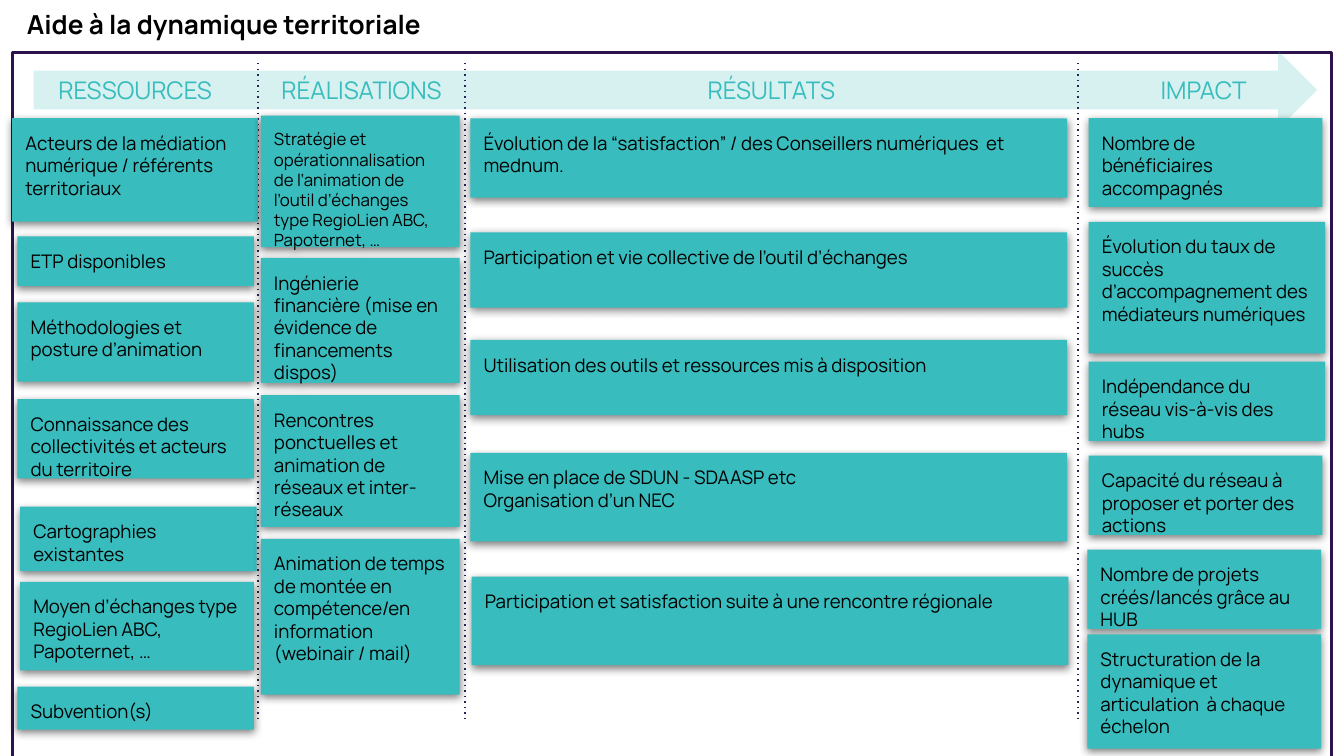
from dataclasses import dataclass

import lxml.etree
import pptx
import pptx.dml.color
import pptx.enum.shapes
import pptx.enum.text
import pptx.oxml.ns
import pptx.util

Inches = pptx.util.Inches
Pt = pptx.util.Pt
MSO_SHAPE = pptx.enum.shapes.MSO_SHAPE
PP_ALIGN = pptx.enum.text.PP_ALIGN
qn = pptx.oxml.ns.qn

TEAL, NAVY, DOTS, BLACK = "39BCBD", "2D134B", "29235C", "000000"
SEPARATORS = (1.92, 3.46, 8.02)


@dataclass
class Card:
    text: str
    left: float
    top: float
    width: float
    height: float
    size: int = 10


@dataclass
class Column:
    header: str
    left: float
    width: float
    cards: list[Card]


COLUMNS = [
    Column("RESSOURCES", 0.09, 1.83, [
        Card("Acteurs de la médiation numérique / référents territoriaux", 0.09, 0.88, 1.83, 0.77),
        Card("ETP disponibles", 0.13, 1.76, 1.76, 0.37),
        Card("Méthodologies et posture d’animation", 0.13, 2.25, 1.76, 0.59),
        Card("Connaissance des collectivités et acteurs du territoire", 0.13, 2.97, 1.76, 0.59),
        Card("Cartographies existantes", 0.15, 3.77, 1.76, 0.48),
        Card("Moyen d’échanges type RegioLien ABC, Papoternet, …", 0.15, 4.33, 1.74, 0.66),
        Card("Subvention(s)", 0.13, 5.11, 1.76, 0.32),
    ]),
    Column("RÉALISATIONS", 1.92, 1.54, [
        Card("Stratégie et opérationnalisation de l’animation de l’outil d’échanges "
             "type RegioLien ABC, Papoternet, …", 1.94, 0.86, 1.48, 0.98, 9),
        Card("Ingénierie financière (mise en évidence de financements dispos)",
             1.94, 1.92, 1.48, 0.93),
        Card("Rencontres ponctuelles et animation de réseaux et inter-réseaux",
             1.94, 2.94, 1.48, 0.98),
        Card("Animation de temps de montée en compétence/en information (webinair / mail)",
             1.94, 4.01, 1.48, 1.16),
    ]),
    Column("RÉSULTATS", 3.46, 4.56, [
        Card("Évolution de la “satisfaction” / des Conseillers numériques  et mednum.",
             3.5, 0.88, 4.44, 0.59),
        Card("Participation et vie collective de l’outil d’échanges", 3.5, 1.73, 4.44, 0.56),
        Card("Utilisation des outils et ressources mis à disposition", 3.5, 2.53, 4.44, 0.56),
        Card("Mise en place de SDUN - SDAASP etc \vOrganisation d’un NEC", 3.5, 3.37, 4.44, 0.66),
        Card("Participation et satisfaction suite à une rencontre régionale",
             3.51, 4.29, 4.44, 0.66),
    ]),
    Column("IMPACT", 8, 1.91, [
        Card("Nombre de bénéficiaires accompagnés", 8.1, 0.88, 1.74, 0.66),
        Card("Évolution du taux de succès d’accompagnement des médiateurs numériques",
             8.1, 1.65, 1.76, 0.98),
        Card("Indépendance du réseau vis-à-vis des hubs", 8.1, 2.69, 1.76, 0.59),
        Card("Capacité du réseau à proposer et porter des actions", 8.1, 3.39, 1.74, 0.59),
        Card("Nombre de projets créés/lancés grâce au HUB", 8.09, 4.09, 1.74, 0.59),
        Card("Structuration de la dynamique et articulation  à chaque échelon",
             8.09, 4.72, 1.74, 0.85),
    ]),
]


def rgb(color: str) -> pptx.dml.color.RGBColor:
    return pptx.dml.color.RGBColor.from_string(color)


def add_alpha(color_element, percent: int) -> None:
    lxml.etree.SubElement(color_element, qn("a:alpha"), val=str(percent * 1000))


def set_text(sp, text: str, size: int, color: str, align=PP_ALIGN.LEFT, bold=False) -> None:
    tf = sp.text_frame
    tf.text = text
    tf.word_wrap = True
    tf.auto_size = pptx.enum.text.MSO_AUTO_SIZE.NONE
    tf.vertical_anchor = pptx.enum.text.MSO_ANCHOR.TOP
    tf.margin_left = tf.margin_right = tf.margin_top = tf.margin_bottom = Inches(0.1)
    for p in tf.paragraphs:
        p.alignment = align
        for r in p.runs:
            r.font.name = "Manrope"
            r.font.size = Pt(size)
            r.font.bold = bold
            r.font.color.rgb = rgb(color)


def add_block(s, kind, left: float, top: float, width: float, height: float, fill=None):
    sp = s.shapes.add_shape(kind, Inches(left), Inches(top), Inches(width), Inches(height))
    sp.shadow.inherit = False
    sp.line.fill.background()
    if fill:
        sp.fill.solid()
        sp.fill.fore_color.rgb = rgb(fill)
    else:
        sp.fill.background()
    return sp


def add_card(s, card: Card) -> None:
    sp = add_block(s, MSO_SHAPE.RECTANGLE, card.left, card.top, card.width, card.height, TEAL)
    set_text(sp, card.text, card.size, BLACK)
    effects = sp._element.spPr.find(qn("a:effectLst"))
    shadow = lxml.etree.SubElement(
        effects, qn("a:outerShdw"), blurRad=str(Pt(4.5)), dist=str(Pt(1.5)),
        dir="5400000", algn="bl", rotWithShape="0")
    add_alpha(lxml.etree.SubElement(shadow, qn("a:srgbClr"), val=BLACK), 50)


def add_separator(s, x: float) -> None:
    line = s.shapes.add_connector(pptx.enum.shapes.MSO_CONNECTOR.STRAIGHT,
                                  Inches(x), Inches(0.47), Inches(x), Inches(5.36))
    line.line.color.rgb = rgb(DOTS)
    line.line.width = Pt(0.75)
    spPr = line._element.spPr
    lxml.etree.SubElement(spPr.find(qn("a:ln")), qn("a:prstDash"), val="dot")
    lxml.etree.SubElement(spPr, qn("a:effectLst"))


def add_header(s, column: Column) -> None:
    box = s.shapes.add_textbox(Inches(column.left), Inches(0.46),
                               Inches(column.width), Inches(0.52))
    set_text(box, column.header, 13, TEAL, PP_ALIGN.CENTER)


def main() -> None:
    prs = pptx.Presentation()
    prs.slide_width = Inches(10)
    prs.slide_height = prs.slide_width * 9 // 16
    s = prs.slides.add_slide(prs.slide_layouts[5])

    # Title
    title = s.shapes.title
    title.left, title.top = Inches(0.1), Inches(-0.04)
    title.width, title.height = Inches(6.19), Inches(0.32)
    set_text(title, "Aide à la dynamique territoriale", 14, BLACK, bold=True)

    # Frame and arrow band
    frame = add_block(s, MSO_SHAPE.RECTANGLE, 0.09, 0.39, 9.82, 5.46)
    frame.line.color.rgb = rgb(NAVY)
    frame.line.width = Pt(1.5)
    arrow = add_block(s, MSO_SHAPE.RIGHT_ARROW, 0.25, 0.38, 9.55, 0.58, TEAL)
    add_alpha(arrow._element.spPr.find(qn("a:solidFill"))[0], 20)

    # Separators, then headers and cards
    for x in SEPARATORS:
        add_separator(s, x)
    for column in COLUMNS:
        add_header(s, column)
        for card in column.cards:
            add_card(s, card)

    prs.save("out.pptx")


if __name__ == "__main__":
    main()
